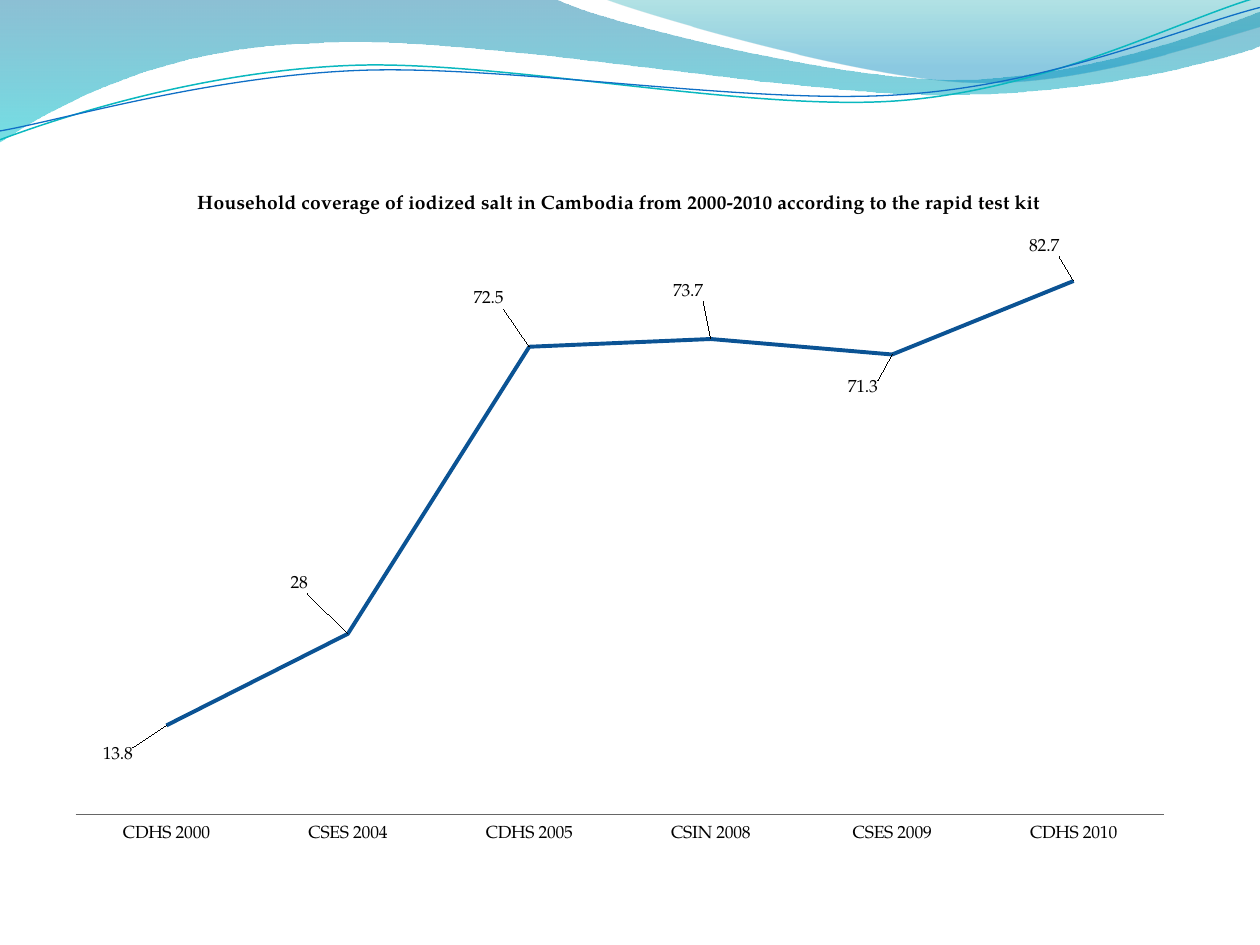
from math import cos, radians, sin

from lxml.etree import SubElement
from pptx import Presentation
from pptx.chart.data import CategoryChartData
from pptx.dml.color import RGBColor
from pptx.enum.chart import (
    XL_CHART_TYPE, XL_LABEL_POSITION, XL_MARKER_STYLE, XL_TICK_LABEL_POSITION, XL_TICK_MARK,
)
from pptx.oxml import parse_xml
from pptx.oxml.ns import nsdecls, qn
from pptx.util import Cm, Pt

FONT = "TeX Gyre Pagella"
TITLE = "Household coverage of iodized salt in Cambodia from 2000-2010 according to the rapid test kit"
# Survey, coverage in percent, label shift in percent of the chart
SURVEYS = [
    ("CDHS 2000", 13.8, (-4.3, 6.5)),
    ("CSES 2004", 28, (-4.3, -5.1)),
    ("CDHS 2005", 72.5, (-3.6, -4.8)),
    ("CSIN 2008", 73.7, (-2, -4.8)),
    ("CSES 2009", 71.3, (-2.6, 7.1)),
    ("CDHS 2010", 82.7, (-2.6, -2.8)),
]

# Outlines in inches: two numbers are a corner, six are a Bézier curve
LEFT_WAVE = [
    (0, 0), (4.4, -0.01), (4.76, 0.17, 6.64, 0.63, 7.58, 0.63),
    (8.53, 0.63, 9.58, 0.26, 10, 0.09), (10.01, 0.36),
    (9.83, 0.44, 8.7, 0.76, 7.46, 0.75), (6.22, 0.75, 3.82, 0.28, 2.57, 0.34),
    (1.29, 0.36, 0.46, 0.83, -0.01, 1.13), (0, 0),
]
RIGHT_WAVE = [
    (4.79, -0.01), (5.09, 0.11, 6.82, 0.62, 7.69, 0.65),
    (8.56, 0.69, 9.61, 0.32, 10, 0.21), (10, 0), (4.79, -0.01),
]
TEAL_LINE = [
    (0, 1.11), (0.48, 0.93, 1.58, 0.57, 2.77, 0.52),
    (3.95, 0.47, 5.93, 0.89, 7.13, 0.8), (8.33, 0.71, 9.38, 0.15, 9.98, -0.02),
]
BLUE_LINE = [
    (0, 1.04), (0.47, 0.96, 1.64, 0.61, 2.83, 0.56),
    (4.03, 0.51, 5.97, 0.84, 7.17, 0.75), (8.36, 0.67, 9.41, 0.21, 10, 0.06),
]
LINE_TILT = -2.7


def rgb(value):
    return RGBColor.from_string(value)


def level(outline, tilt):
    """Turn an outline back by its tilt, around the middle between its ends."""
    middle_x = (outline[0][0] + outline[-1][-2]) / 2
    middle_y = (outline[0][1] + outline[-1][-1]) / 2
    cosine, sine = cos(radians(-tilt)), sin(radians(-tilt))
    turned = []
    for segment in outline:
        numbers = []
        for x, y in zip(segment[::2], segment[1::2]):
            x, y = x - middle_x, y - middle_y
            numbers += [middle_x + x * cosine - y * sine, middle_y + x * sine + y * cosine]
        turned.append(tuple(numbers))
    return turned


def add_outline(shapes, outline, close):
    """Build the corners first, then bend the curved segments."""
    segments = [[Cm(2.54 * number) for number in segment] for segment in outline]
    builder = shapes.build_freeform(*segments[0])
    builder.add_line_segments([segment[-2:] for segment in segments[1:]], close=close)
    shape = builder.convert_to_shape()
    shape.shadow.inherit = False
    straight_lines = list(shape._element.spPr.iter(qn("a:lnTo")))
    for straight, segment in zip(straight_lines, segments[1:]):
        if len(segment) == 6:
            curve = parse_xml(f"<a:cubicBezTo {nsdecls('a')}/>")
            for x, y in zip(segment[::2], segment[1::2]):
                SubElement(curve, qn("a:pt"), x=str(x - shape.left), y=str(y - shape.top))
            straight.getparent().replace(straight, curve)
    return shape


def add_wave(shapes, outline, stops):
    """Add a borderless wave; stops hold position, colour and opacity in percent."""
    shape = add_outline(shapes, outline, True)
    shape.line.fill.background()
    shape.fill.gradient()
    shape.fill.gradient_angle = 270
    for stop, (position, color, _) in zip(shape.fill.gradient_stops, stops):
        stop.position = position
        stop.color.rgb = rgb(color)
    colors = shape._element.spPr.iter(qn("a:srgbClr"))
    for element, (_, _, opacity) in zip(colors, stops):
        SubElement(element, qn("a:alpha"), val=str(opacity * 1000))


def add_wavy_line(shapes, outline, color, width):
    shape = add_outline(shapes, level(outline, LINE_TILT), False)
    shape.rotation = LINE_TILT
    shape.fill.background()
    shape.line.color.rgb = rgb(color)
    shape.line.width = Pt(width)


def set_layout(element, after, **settings):
    """Give a chart part a manual layout, placed after its named child."""
    for old in element.findall(qn("c:layout")):
        element.remove(old)
    layout = parse_xml(f"<c:layout {nsdecls('c')}><c:manualLayout/></c:layout>")
    for name, value in settings.items():
        SubElement(layout[0], qn(f"c:{name}"), val=str(value))
    previous = element.find(qn(after)) if after else None
    element.insert(0 if previous is None else element.index(previous) + 1, layout)


def hide_leader_lines(labels):
    labels._element.append(parse_xml(
        f'<c:extLst {nsdecls("c")}><c:ext uri="{{CE6537A1-D6FC-4f65-9D91-7224C49458BB}}" '
        'xmlns:c15="http://schemas.microsoft.com/office/drawing/2012/chart">'
        '<c15:showLeaderLines val="0"/></c:ext></c:extLst>'
    ))


def format_title(chart):
    chart.has_title = True
    title = chart.chart_title
    title.include_in_layout = False
    paragraph = title.text_frame.paragraphs[0]
    paragraph.text = TITLE
    font = paragraph.font
    font.name, font.size, font.bold = FONT, Pt(11), True
    font.color.rgb = rgb("000000")
    set_layout(title._element, "c:tx", xMode="edge", yMode="edge", x=0.124, y=0.032)


def format_axes(chart):
    category_axis, value_axis = chart.category_axis, chart.value_axis
    category_axis.major_tick_mark = XL_TICK_MARK.NONE
    category_axis.tick_label_position = XL_TICK_LABEL_POSITION.LOW
    category_axis.tick_labels.offset = 0
    category_axis.format.line.color.rgb = rgb("666666")
    category_axis.format.line.width = Pt(0.5)
    value_axis.minimum_scale, value_axis.maximum_scale = 0, 90
    value_axis.has_major_gridlines = False
    value_axis.visible = False


def format_series(series):
    series.smooth = False
    series.marker.style = XL_MARKER_STYLE.NONE
    line = series.format.line
    line.width = Pt(2.25)
    line.color.rgb = rgb("0F6FC6")
    line.color.brightness = -0.25
    labels = series.data_labels
    labels.show_value = True
    for index, (_, _, (x, y)) in enumerate(SURVEYS):
        series.points[index].data_label.position = XL_LABEL_POSITION.ABOVE
        label = labels._element.findall(qn("c:dLbl"))[index]
        set_layout(label, "c:idx", x=x / 100, y=y / 100)
    hide_leader_lines(labels)


def add_coverage_chart(slide):
    data = CategoryChartData()
    data.categories = [name for name, _, _ in SURVEYS]
    data.add_series("Series 1", [value for _, value, _ in SURVEYS])
    chart = slide.shapes.add_chart(
        XL_CHART_TYPE.LINE, Cm(1.07), Cm(3.38), Cm(22.86), Cm(13.77), data
    ).chart
    chart.has_legend = False
    chart.font.name, chart.font.size = FONT, Pt(10)
    chart.font.color.rgb = rgb("000000")
    chart.plots[0].vary_by_categories = False
    format_title(chart)
    format_axes(chart)
    format_series(chart.plots[0].series[0])
    set_layout(chart._chartSpace.chart.plotArea, None, layoutTarget="inner",
               xMode="edge", yMode="edge", x=0.02, y=0.097, w=0.96, h=0.85)


def main():
    presentation = Presentation()
    presentation.slide_width, presentation.slide_height = Cm(25.4), Cm(19.05)
    slide = presentation.slides.add_slide(presentation.slide_layouts[6])
    add_wave(slide.shapes, LEFT_WAVE, [(0, "0074A1", 45), (1, "00C6CF", 55)])
    add_wave(slide.shapes, RIGHT_WAVE, [(0, "00A1A9", 30), (0.8, "008BBF", 45)])
    lines = slide.shapes.add_group_shape().shapes
    add_wavy_line(lines, TEAL_LINE, "0AB8BF", 0.85)
    add_wavy_line(lines, BLUE_LINE, "0F6FC6", 0.75)
    add_coverage_chart(slide)
    presentation.save("out.pptx")


if __name__ == "__main__":
    main()
